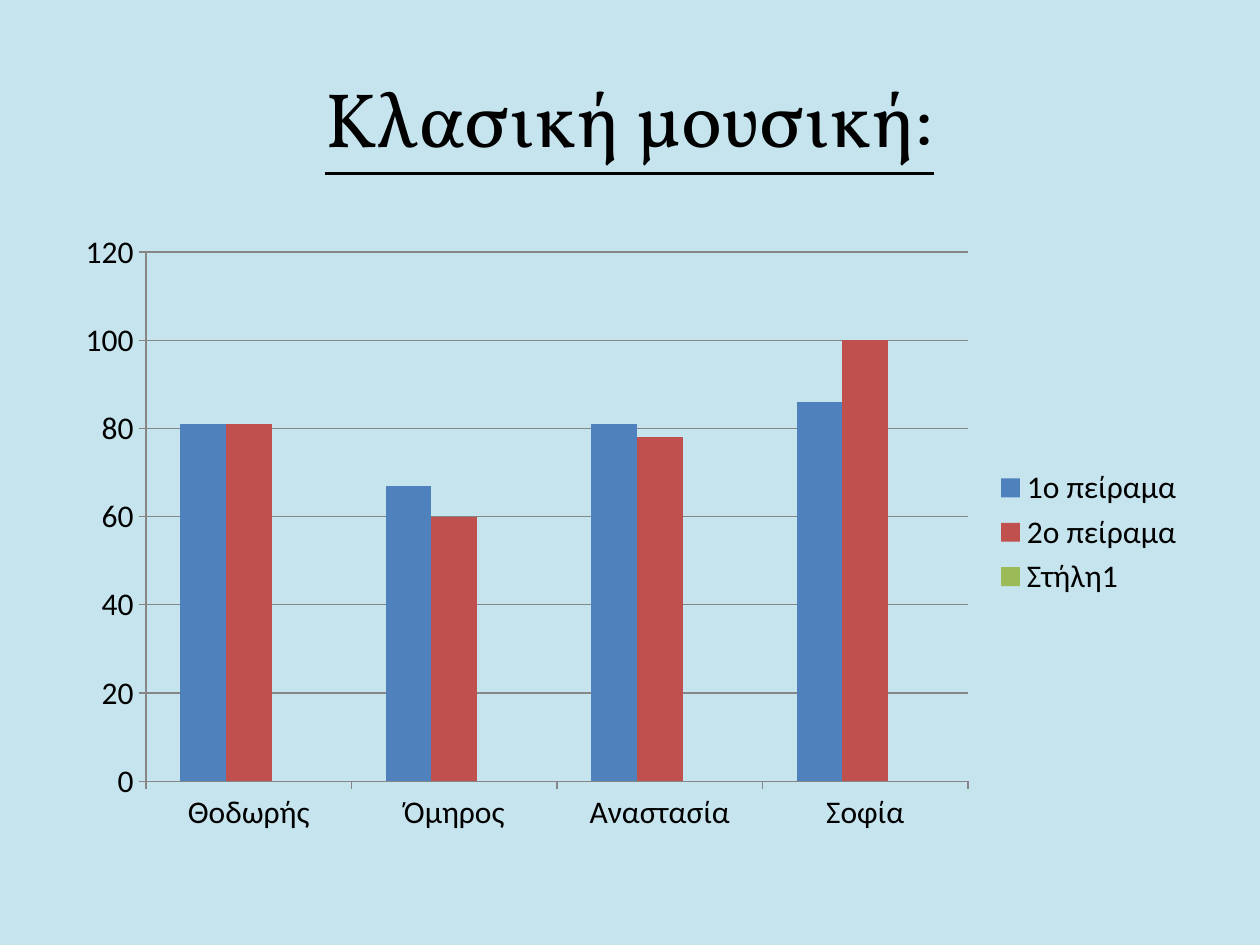
from dataclasses import dataclass

from pptx import Presentation
from pptx.chart.data import CategoryChartData
from pptx.dml.color import RGBColor
from pptx.enum.chart import XL_CHART_TYPE as ChartType
from pptx.enum.chart import XL_LEGEND_POSITION as LegendPosition
from pptx.enum.chart import XL_TICK_MARK as TickMark
from pptx.enum.text import MSO_ANCHOR as Anchor
from pptx.enum.text import PP_ALIGN as Align
from pptx.slide import Slide
from pptx.util import Inches, Pt

COLORS = {
    "background": "C5E4ED",
    "text": "000000",
    "axis": "868686",
    "first": "4F81BD",
    "second": "C0504D",
    "third": "9BBB59",
}


@dataclass
class Experiment:
    name: str
    values: tuple[int | None, ...]
    color: str


STUDENTS = ("Θοδωρής", "Όμηρος", "Αναστασία", "Σοφία")
EXPERIMENTS = (
    Experiment("1ο πείραμα", (81, 67, 81, 86), "first"),
    Experiment("2ο πείραμα", (81, 60, 78, 100), "second"),
    Experiment("Στήλη1", (None,) * len(STUDENTS), "third"),
)


def color(name: str) -> RGBColor:
    return RGBColor.from_string(COLORS[name])


def add_title(slide: Slide, text: str) -> None:
    shape = slide.shapes.add_textbox(Inches(0.5), Inches(0.3), Inches(9), Inches(1.25))
    text_frame = shape.text_frame
    text_frame.word_wrap = True
    text_frame.vertical_anchor = Anchor.MIDDLE
    text_frame.text = text
    paragraph = text_frame.paragraphs[0]
    paragraph.alignment = Align.CENTER
    font = paragraph.runs[0].font
    font.name = "Vollkorn"
    font.size = Pt(44)
    font.underline = True
    font.color.rgb = color("text")


def add_results_chart(slide: Slide) -> None:
    data = CategoryChartData()
    data.categories = STUDENTS
    for experiment in EXPERIMENTS:
        data.add_series(experiment.name, experiment.values)
    chart = slide.shapes.add_chart(
        ChartType.COLUMN_CLUSTERED,
        Inches(0.5), Inches(1.75), Inches(9), Inches(4.95), data,
    ).chart
    chart.has_title = False
    chart.font.name = "Calibri"
    chart.font.size = Pt(18)
    chart.font.color.rgb = color("text")
    chart.has_legend = True
    chart.legend.position = LegendPosition.RIGHT
    chart.legend.include_in_layout = False

    plot = chart.plots[0]
    plot.vary_by_categories = False
    plot.gap_width = 150
    plot.overlap = 0
    for series, experiment in zip(plot.series, EXPERIMENTS):
        series.invert_if_negative = False
        series.format.fill.solid()
        series.format.fill.fore_color.rgb = color(experiment.color)

    value_axis = chart.value_axis
    value_axis.minimum_scale, value_axis.maximum_scale = 0, 120
    value_axis.major_unit = 20
    value_axis.has_major_gridlines = True
    for axis in (chart.category_axis, value_axis):
        axis.major_tick_mark = TickMark.OUTSIDE
        axis.minor_tick_mark = TickMark.NONE
    for ruled in (chart.category_axis, value_axis, value_axis.major_gridlines):
        ruled.format.line.color.rgb = color("axis")
        ruled.format.line.width = Pt(0.75)


def main() -> None:
    presentation = Presentation()
    presentation.slide_width = Inches(10)
    presentation.slide_height = Inches(7.5)
    slide = presentation.slides.add_slide(presentation.slide_layouts[6])
    slide.background.fill.solid()
    slide.background.fill.fore_color.rgb = color("background")
    add_title(slide, "Κλασική μουσική:")
    add_results_chart(slide)
    presentation.save("out.pptx")


if __name__ == "__main__":
    main()
